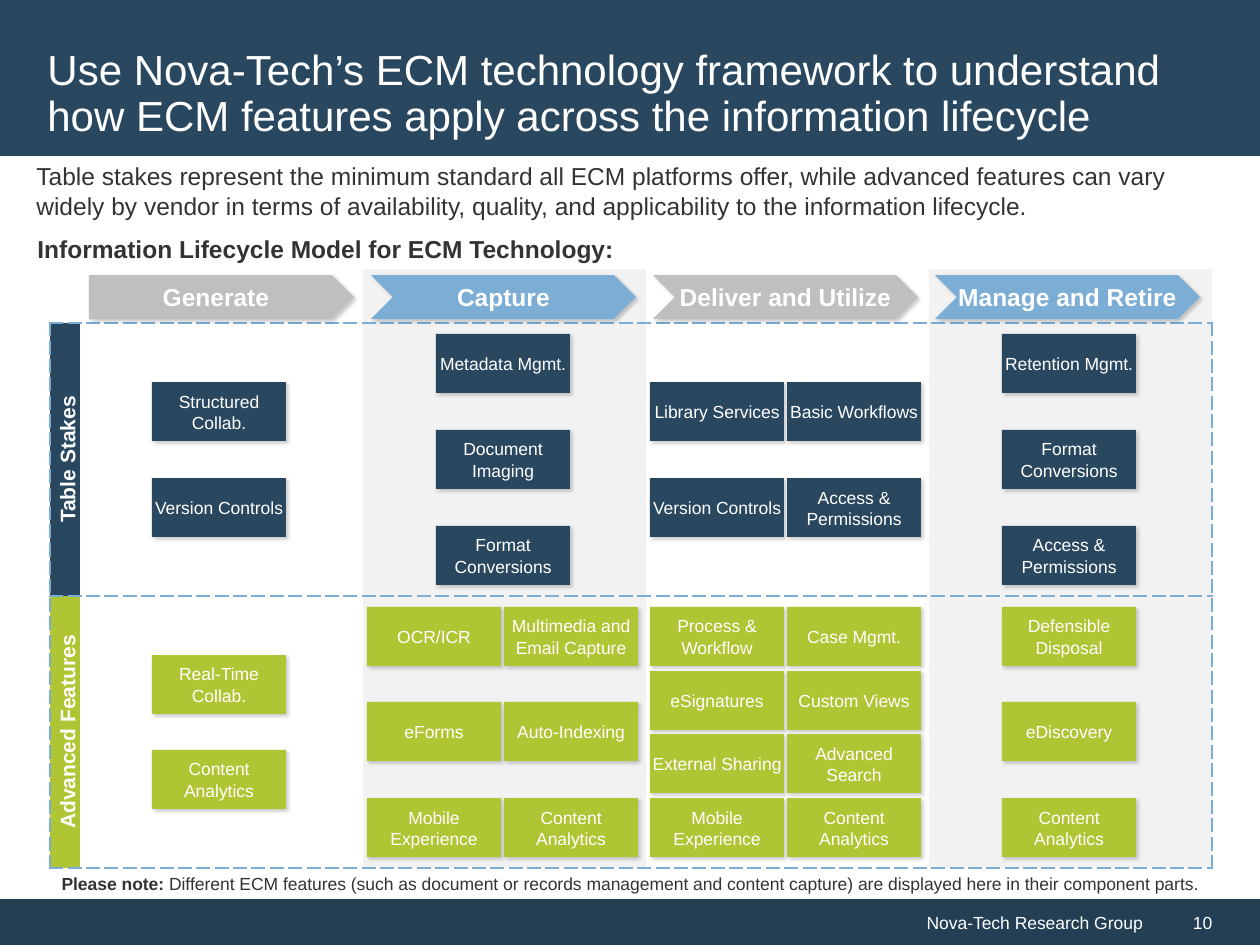
from lxml import etree
from pptx import Presentation
from pptx import util as u
from pptx.dml import color
from pptx.enum import shapes, text
from pptx.oxml import ns

NAVY, LIME, BLUE, PALE = "29475F", "B0C534", "7CADD4", "F2F2F2"
GREY, WHITE, INK, DARK = "BFBFBF", "FFFFFF", "333333", "243F54"
PLAIN = "{2D5ABB26-0587-4C30-8999-92F81FD0307C}"
LABEL, COL, HEAD, BAND = 30, 283, 54, 273
STAGES = ["Generate", "Capture", "Deliver and Utilize", "Manage and Retire"]
BANDS = [
    ("Table Stakes", NAVY, [
        [["Structured Collab."], ["Version Controls"]],
        [["Metadata Mgmt."], ["Document Imaging"], ["Format Conversions"]],
        [["Library Services", "Basic Workflows"],
         ["Version Controls", "Access & Permissions"]],
        [["Retention Mgmt."], ["Format Conversions"], ["Access & Permissions"]],
    ]),
    ("Advanced Features", LIME, [
        [["Real-Time Collab."], ["Content Analytics"]],
        [["OCR/ICR", "Multimedia and Email Capture"],
         ["eForms", "Auto-Indexing"],
         ["Mobile Experience", "Content Analytics"]],
        [["Process & Workflow", "Case Mgmt."],
         ["eSignatures", "Custom Views"],
         ["External Sharing", "Advanced Search"],
         ["Mobile Experience", "Content Analytics"]],
        [["Defensible Disposal"], ["eDiscovery"], ["Content Analytics"]],
    ]),
]


def px(n):
    """Turn whole pixels into EMU."""
    return u.Emu(round(n * 914400 / 126))


def hue(code):
    """Turn a hex string into a colour."""
    return color.RGBColor.from_string(code)


def write(frame, words, size=10, ink=WHITE, bold=False, lead="", align="LEFT",
          mid=True, wrap=True, line=None, before=None):
    """Fill a text frame with one formatted paragraph."""
    frame.word_wrap = wrap
    frame.vertical_anchor = getattr(text.MSO_ANCHOR, "MIDDLE" if mid else "TOP")
    para = frame.paragraphs[0]
    para.alignment = getattr(text.PP_ALIGN, align)
    if line:
        para.line_spacing = u.Pt(line)
    if before:
        para.space_before = u.Pt(before)
    for part, heavy in ((lead, True), (words, bold)):
        if part:
            run = para.add_run()
            run.text = part
            run.font.name, run.font.size, run.font.bold = "Arial", u.Pt(size), heavy
            run.font.color.rgb = hue(ink)


def label(slide, box, words, **form):
    """Place a text box."""
    write(slide.shapes.add_textbox(*map(px, box)).text_frame, words, **form)


def block(slide, box, fill, kind="RECTANGLE"):
    """Place a plain filled shape."""
    shape = slide.shapes.add_shape(getattr(shapes.MSO_SHAPE, kind), *map(px, box))
    shape.shadow.inherit = False
    shape.fill.solid()
    shape.fill.fore_color.rgb = hue(fill)
    shape.line.fill.background()
    return shape


def card(slide, box, fill, words, kind="RECTANGLE", **form):
    """Place a shadowed shape with centred text."""
    shape = block(slide, box, fill, kind)
    glow = shape._element.spPr.find(ns.qn("a:effectLst"))
    cast = etree.SubElement(glow, ns.qn("a:outerShdw"), blurRad="25400",
                            dist="25400", dir="2700000", algn="tl", rotWithShape="0")
    tone = etree.SubElement(cast, ns.qn("a:srgbClr"), val="000000")
    etree.SubElement(tone, ns.qn("a:alpha"), val="20000")
    shape.text_frame.margin_left = shape.text_frame.margin_right = 0
    write(shape.text_frame, words, align="CENTER", **form)


def edge(cell, sides):
    """Draw dashed lines on the given sides of a cell."""
    prop = cell._tc.get_or_add_tcPr()
    for spot, side in enumerate(sides):
        line = etree.Element(ns.qn("a:ln" + side), w="12700")
        fill = etree.SubElement(line, ns.qn("a:solidFill"))
        etree.SubElement(fill, ns.qn("a:srgbClr"), val=BLUE)
        etree.SubElement(line, ns.qn("a:prstDash"), val="sysDash")
        prop.insert(spot, line)


def grid(slide, left, top):
    """Place the table behind the stages and features."""
    wide, tall = [LABEL] + [COL] * 4, [HEAD, BAND, BAND - 1]
    frame = slide.shapes.add_table(3, 5, *map(px, (left, top, sum(wide), sum(tall))))
    table = frame.table
    table.first_row = table.horz_banding = False
    table._tbl.tblPr.find(ns.qn("a:tableStyleId")).text = PLAIN
    for col, size in zip(table.columns, wide):
        col.width = px(size)
    for i, size in enumerate(tall):
        table.rows[i].height = px(size)
        for j in range(5):
            cell = table.cell(i, j)
            fill = PALE if j in (2, 4) else WHITE
            if i and not j:
                name, fill, _ = BANDS[i - 1]
                cell._tc.get_or_add_tcPr().set("vert", "vert270")
                write(cell.text_frame, name, size=12, bold=True,
                      align="CENTER", before=6)
                cell.vertical_anchor = text.MSO_ANCHOR.MIDDLE
            if i or j in (2, 4):
                cell.fill.solid()
                cell.fill.fore_color.rgb = hue(fill)
            else:
                cell.fill.background()
            sides = ["L"] * (j == 0) + ["R"] * (j == 4) + ["T", "B"]
            edge(cell, sides if i else ["B"])


def stages(slide, left, top):
    """Place the row of stage arrows."""
    for i, name in enumerate(STAGES):
        card(slide, (left + 9 + i * 282, top + 6, 265, 44), BLUE if i % 2 else GREY,
             name, "CHEVRON" if i else "PENTAGON", size=14, bold=True)


def cards(slide, box, fill, rows):
    """Centre rows of feature cards in one cell of the table."""
    left, top, width, height = box
    wide, tall, step = 134, 59, 137
    pitch = 191 / (max(len(rows), 3) - 1)
    first = top + (height - tall - pitch * (len(rows) - 1)) / 2
    for i, row in enumerate(rows):
        start = left + (width - wide - step * (len(row) - 1)) / 2 - 2
        for j, name in enumerate(row):
            spot = (round(start + j * step), round(first + i * pitch), wide, tall)
            card(slide, spot, fill, name)


def model(slide, left, top):
    """Place the whole lifecycle model."""
    grid(slide, left, top)
    stages(slide, left + LABEL, top)
    for i, (_, fill, cols) in enumerate(BANDS):
        for j, rows in enumerate(cols):
            box = (left + LABEL + j * COL, top + HEAD + i * BAND, COL, BAND - i)
            cards(slide, box, fill, rows)


def header(slide, box):
    """Place the title band."""
    left, top, width, _ = box
    block(slide, box, NAVY)
    label(slide, (left + 35, top + 35, width - 72, 118),
          "Use Nova-Tech’s ECM technology framework to understand how ECM "
          "features apply across the information lifecycle", size=24, line=26)


def footer(slide, box):
    """Place the footer with owner and page number."""
    left, top, width, height = box
    owner = block(slide, (left, top, width - 105, height), DARK)
    write(owner.text_frame, "Nova-Tech Research Group", align="RIGHT")
    page = block(slide, (left + width - 105, top, 105, height), DARK)
    page.text_frame.margin_left = px(38)
    write(page.text_frame, "10")


def main():
    """Build and save the slide."""
    deck = Presentation()
    deck.slide_width, deck.slide_height = px(1260), px(945)
    slide = deck.slides.add_slide(deck.slide_layouts[6])
    footer(slide, (0, 899, 1260, 46))
    header(slide, (0, 0, 1260, 156))
    label(slide, (24, 155, 1198, 72),
          "Table stakes represent the minimum standard all ECM platforms offer, "
          "while advanced features can vary widely by vendor in terms of "
          "availability, quality, and applicability to the information lifecycle.",
          size=14, ink=INK, mid=False)
    label(slide, (25, 228, 612, 43), "Information Lifecycle Model for ECM Technology:",
          size=14, ink=INK, bold=True, mid=False, wrap=False)
    model(slide, 50, 269)
    label(slide, (44, 867, 1166, 34),
          "Different ECM features (such as document or records management and "
          "content capture) are displayed here in their component parts.",
          lead="Please note: ", ink=INK, align="RIGHT", mid=False)
    deck.save("out.pptx")


if __name__ == "__main__":
    main()
